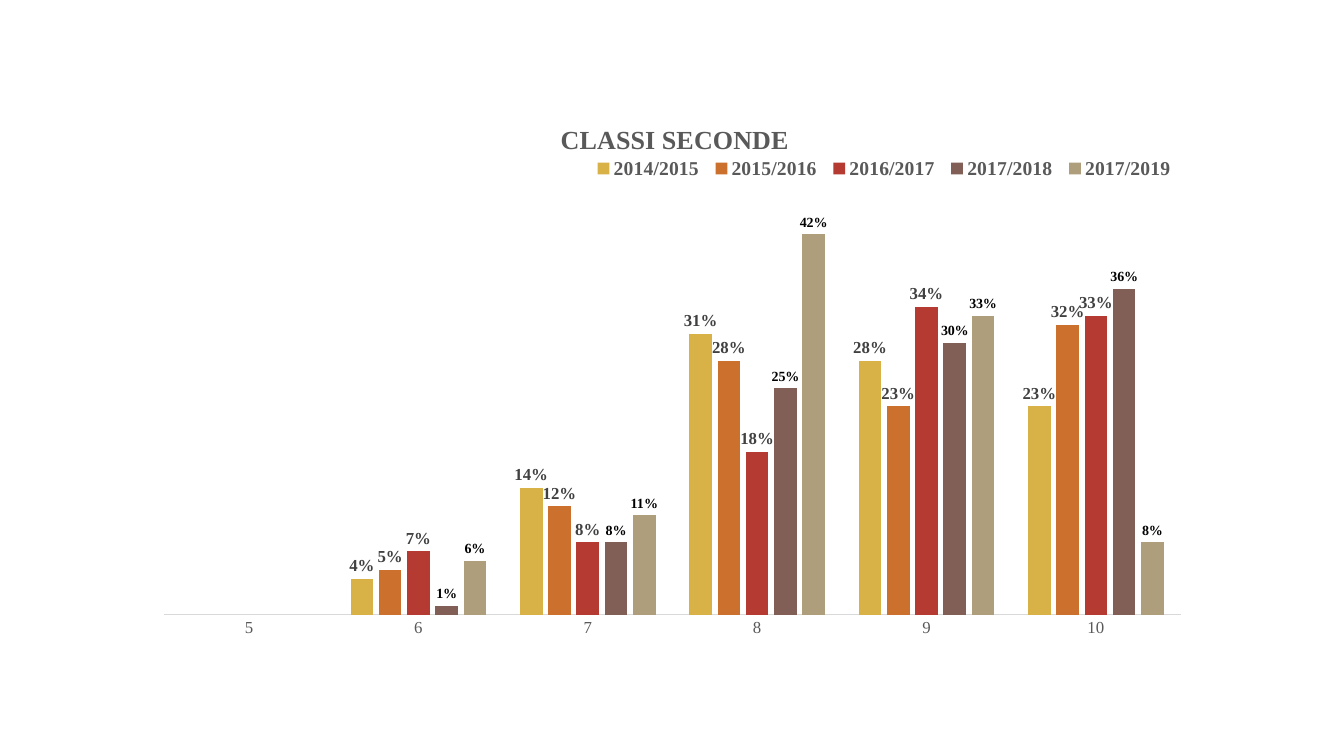
from lxml import etree
from pptx import Presentation
from pptx.chart.data import CategoryChartData as Data
from pptx.dml.color import RGBColor as RGB
from pptx.enum.chart import XL_CHART_TYPE as Kind
from pptx.enum.chart import XL_LABEL_POSITION as Spot
from pptx.enum.chart import XL_LEGEND_POSITION as Side
from pptx.enum.chart import XL_TICK_MARK as Tick
from pptx.oxml.ns import qn
from pptx.util import Inches, Pt

FACE = "Times New Roman"
GRAY = "595959"
GRADES = ["5", "6", "7", "8", "9", "10"]
# Year, bar colour, label size, label colour, values
YEARS = [
    ("2014/2015", "D9B247", 12, "404040", (None, 0.04, 0.14, 0.31, 0.28, 0.23)),
    ("2015/2016", "CC702D", 12, "404040", (None, 0.05, 0.12, 0.28, 0.23, 0.32)),
    ("2016/2017", "B53A31", 12, "404040", (None, 0.07, 0.08, 0.18, 0.34, 0.33)),
    ("2017/2018", "815F56", 10, "000000", (None, 0.01, 0.08, 0.25, 0.3, 0.36)),
    ("2017/2019", "AE9E7C", 10, "000000", (None, 0.06, 0.11, 0.42, 0.33, 0.08)),
]


def color(code):
    return RGB.from_string(code)


def style(font, size, code, bold=False):
    font.name, font.size, font.bold = FACE, Pt(size), bold
    font.color.rgb = color(code)


def write(frame, text, size=10, code="000000", bold=False):
    run = frame.paragraphs[0].add_run()
    run.text = text
    style(run.font, size, code, bold)


def place(part, index, inner=False, **box):
    """Fix a chart part at fractions of the chart area."""
    for old in part.findall(qn("c:layout")):
        part.remove(old)
    layout = etree.Element(qn("c:layout"))
    part.insert(index, layout)
    manual = etree.SubElement(layout, qn("c:manualLayout"))
    rules = [("layoutTarget", "inner")] if inner else []
    rules += [("xMode", "edge"), ("yMode", "edge")]
    rules += [(key, str(num)) for key, num in box.items()]
    for tag, val in rules:
        etree.SubElement(manual, qn("c:" + tag)).set("val", val)


def add_bars(slide):
    data = Data(number_format="0%")
    data.categories = GRADES
    for year, _, _, _, vals in YEARS:
        data.add_series(year, vals)
    chart = slide.shapes.add_chart(
        Kind.COLUMN_CLUSTERED, Inches(1.42), Inches(0.96),
        Inches(10.5), Inches(5.47), data).chart
    style(chart.font, 10, "000000")
    plot = chart.plots[0]
    plot.vary_by_categories = False
    plot.gap_width, plot.overlap = 150, -25
    for bars, (_, fill, size, ink, _) in zip(plot.series, YEARS):
        bars.format.fill.solid()
        bars.format.fill.fore_color.rgb = color(fill)
        tags = bars.data_labels
        tags.show_value = True
        tags.position = Spot.OUTSIDE_END
        tags.number_format, tags.number_format_is_linked = "0%", False
        style(tags.font, size, ink, bold=True)
    return chart


def set_axes(chart):
    cats, vals = chart.category_axis, chart.value_axis
    cats.major_tick_mark = cats.minor_tick_mark = Tick.NONE
    style(cats.tick_labels.font, 12, GRAY)
    cats.format.line.color.rgb = color("D9D9D9")
    cats.format.line.width = Pt(0.75)
    vals.visible = vals.has_major_gridlines = False
    vals.minimum_scale, vals.maximum_scale = 0, 0.45
    vals.tick_labels.number_format = "0%"
    vals.tick_labels.number_format_is_linked = False


def set_heads(chart):
    # Title
    chart.has_title = True
    title = chart.chart_title
    write(title.text_frame, "CLASSI SECONDE", size=18.6, code=GRAY, bold=True)
    title.include_in_layout = False
    place(title._element, 1, x=0.39, y=0.04)
    # Legend
    chart.has_legend = True
    key = chart.legend
    key.position, key.include_in_layout = Side.TOP, False
    style(key.font, 14, GRAY, bold=True)
    place(key._element, 1, x=0.42, y=0.1, w=0.56, h=0.06)


def main():
    deck = Presentation()
    deck.slide_width, deck.slide_height = Inches(13.33), Inches(7.5)
    slide = deck.slides.add_slide(deck.slide_layouts[6])
    chart = add_bars(slide)
    set_axes(chart)
    set_heads(chart)
    # Plot area
    area = chart.plots[0]._element.getparent()
    place(area, 0, inner=True, x=0.02, y=0.2, w=0.96, h=0.74)
    deck.save("out.pptx")


if __name__ == "__main__":
    main()
